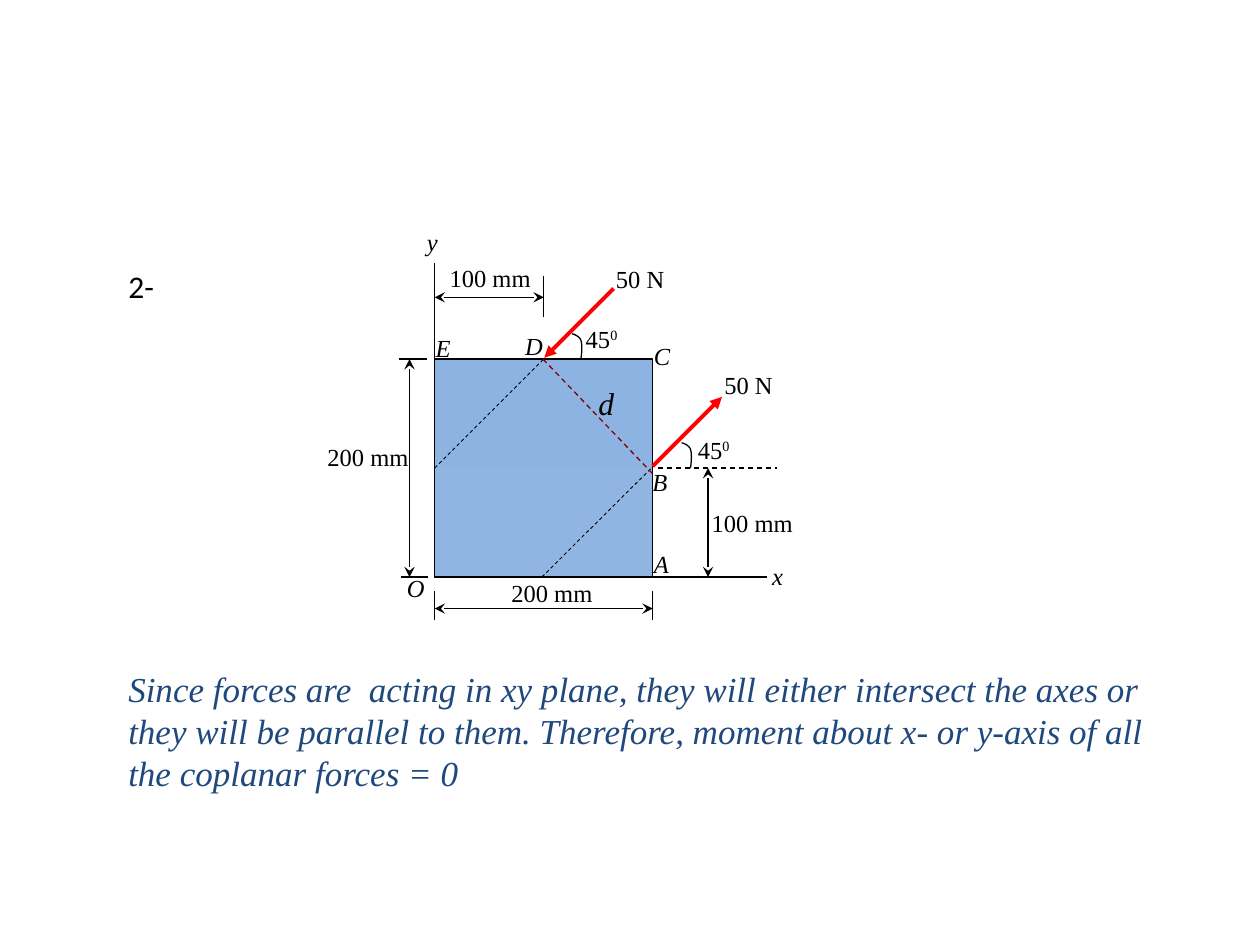
from lxml import etree
from pptx import Presentation
from pptx import util as u
from pptx.dml.color import RGBColor
from pptx.enum import dml, shapes, text
from pptx.oxml.ns import qn

THEME = {
    "ink": "000000", "force": "FF0000", "arm": "800000", "note": "1F497D",
    "plate": ("8DB3E2", "91B5E3"),
    "serif": "Times New Roman", "sans": "Calibri",
    "label": 14, "large": 18, "body": 20,
    "thin": 0.5, "line": 0.75, "bold": 2.25,
}

# Plate: left, middle and right; top, middle and bottom
SIDE = 1.73
LEFT, TOP = 3.45, 2.85
MID_X, RIGHT = LEFT + SIDE / 2, LEFT + SIDE
MID_Y, BOTTOM = TOP + SIDE / 2, TOP + SIDE

AXES = [(RIGHT, BOTTOM, 6.09, BOTTOM), (LEFT, TOP, LEFT, 2.09)]
EXTENSIONS = [
    (LEFT, 4.69, LEFT, 4.92), (RIGHT, 4.69, RIGHT, 4.92),
    (3.17, TOP, 3.39, TOP), (3.18, BOTTOM, 3.4, BOTTOM),
    (MID_X, 2.19, MID_X, 2.52),
]
DIMENSIONS = [
    (LEFT, 4.83, RIGHT, 4.83), (3.25, TOP, 3.25, BOTTOM),
    (5.62, MID_Y, 5.62, BOTTOM), (LEFT, 2.36, MID_X, 2.36),
]
LEVEL = [(5.22, MID_Y, 6.17, MID_Y)]
FORCE_PATHS = [(LEFT, MID_Y, MID_X, TOP), (4.3, BOTTOM, 5.17, MID_Y)]
MOMENT_ARM = [(4.31, TOP, RIGHT, 3.76)]
FORCES = [(4.87, 2.29, 4.32, 2.84), (RIGHT, 3.7, 5.73, 3.15)]

INK = {"color": THEME["ink"], "width": THEME["line"]}
LINES = [
    (AXES, INK),
    (EXTENSIONS, INK),
    (DIMENSIONS, {**INK, "head": "stealth", "tail": "stealth"}),
    (LEVEL, {**INK, "dash": True}),
    (FORCE_PATHS, {**INK, "width": THEME["thin"], "dash": True}),
    (FORCES, {"color": THEME["force"], "width": THEME["bold"], "tail": "triangle"}),
    (MOMENT_ARM, {**INK, "color": THEME["arm"], "dash": True}),
]

ANGLE_FEET = [(4.61, TOP), (5.48, MID_Y)]
ANGLE_CURVES = [  # Bezier control points, measured from the foot of the mark
    ((0, 0), (0.01, -0.06), (0.01, -0.12), (0, -0.15)),
    ((0, -0.15), (-0.01, -0.18), (-0.06, -0.2), (-0.07, -0.2)),
]

POINTS = [  # text, left, top
    ("x", 6.03, 4.4), ("y", 3.29, 1.75), ("O", 3.13, 4.5), ("A", 5.09, 4.31),
    ("B", 5.08, 3.66), ("C", 5.09, 2.66), ("D", 4.07, 2.58), ("E", 3.36, 2.59),
]
VALUES = [
    ("200 mm", 3.96, 4.54), ("200 mm", 2.5, 3.46),
    ("100 mm", 5.55, 3.98), ("100 mm", 3.47, 2.04),
    ("50 N", 5.65, 2.89), ("50 N", 4.79, 2.05),
]
ANGLES = [("45", 5.44, 3.4), ("45", 4.55, 2.52)]
NOTE = ("Since forces are  acting in xy plane, they will either intersect the axes or "
        "they will be parallel to them. Therefore, moment about x- or y-axis of all "
        "the coplanar forces = 0")


def rgb(value):
    return RGBColor.from_string(value)


def add_text(parent, content, box, size=THEME["label"], font=THEME["serif"],
             color=THEME["ink"], italic=False, wrap=True, raised=None):
    tf = parent.add_textbox(*map(u.Inches, box)).text_frame
    tf.word_wrap = wrap
    tf.vertical_anchor = text.MSO_ANCHOR.TOP
    p = tf.paragraphs[0]
    for part in filter(None, (content, raised)):
        r = p.add_run()
        r.text = part
        for name, value in {"name": font, "size": u.Pt(size), "italic": italic}.items():
            setattr(r.font, name, value)
        r.font.color.rgb = rgb(color)
    if raised:
        r.font._element.set("baseline", "30000")


def add_line(parent, ends, color, width, dash=False, head=None, tail=None):
    c = parent.add_connector(shapes.MSO_CONNECTOR.STRAIGHT, *map(u.Inches, ends))
    c.line.color.rgb = rgb(color)
    c.line.width = u.Pt(width)
    if dash:
        c.line.dash_style = dml.MSO_LINE.DASH
    ln = c.line._get_or_add_ln()
    for tag, kind in (("a:headEnd", head), ("a:tailEnd", tail)):
        if kind:
            etree.SubElement(ln, qn(tag)).set("type", kind)
    etree.SubElement(c._element.spPr, qn("a:effectLst"))


def curve_point(curve, t):
    weights = ((1 - t) ** 3, 3 * t * (1 - t) ** 2, 3 * t * t * (1 - t), t ** 3)
    return [sum(w * pt[axis] for w, pt in zip(weights, curve)) for axis in (0, 1)]


def outline(sp):
    sp.shadow.inherit = False
    sp.line.color.rgb = rgb(THEME["ink"])
    sp.line.width = u.Pt(THEME["line"])


def add_angle_mark(parent, foot, steps=8):
    offsets = [curve_point(c, i / steps) for c in ANGLE_CURVES for i in range(1, steps + 1)]
    dots = [(u.Inches(foot[0] + dx), u.Inches(foot[1] + dy)) for dx, dy in offsets]
    builder = parent.build_freeform(*map(u.Inches, foot))
    builder.add_line_segments(dots, close=False)
    sp = builder.convert_to_shape()
    sp.fill.background()
    outline(sp)


def add_plate(parent):
    box = map(u.Inches, (LEFT, TOP, SIDE, SIDE))
    sp = parent.add_shape(shapes.MSO_SHAPE.RECTANGLE, *box)
    sp.fill.gradient()
    sp.fill.gradient_angle = 270
    for stop, color in zip(sp.fill.gradient_stops, THEME["plate"]):
        stop.color.rgb = rgb(color)
    outline(sp)


def main():
    prs = Presentation()
    prs.slide_width, prs.slide_height = u.Inches(10), u.Inches(7.5)
    slide = prs.slides.add_slide(prs.slide_layouts[6])
    diagram = slide.shapes.add_group_shape().shapes

    add_plate(diagram)
    for group, style in LINES:
        for ends in group:
            add_line(diagram, ends, **style)
    for foot in ANGLE_FEET:
        add_angle_mark(diagram, foot)

    for name, x, y in POINTS:
        add_text(diagram, name, (x, y, 0.29, 0.33), italic=True)
    for value, x, y in VALUES:
        add_text(diagram, value, (x, y, 1, 0.33))
    for value, x, y in ANGLES:
        add_text(diagram, value, (x, y, 0.78, 0.33), raised="0")
    add_text(diagram, "d", (4.65, 3, 0.42, 0.4), THEME["large"], italic=True)

    add_text(slide.shapes, NOTE, (0.92, 5.25, 8.33, 1.11), THEME["body"],
             color=THEME["note"], italic=True)
    add_text(slide.shapes, "2-", (0.92, 2.07, 0.41, 0.4), THEME["large"],
             font=THEME["sans"], wrap=False)
    prs.save("out.pptx")


if __name__ == "__main__":
    main()
